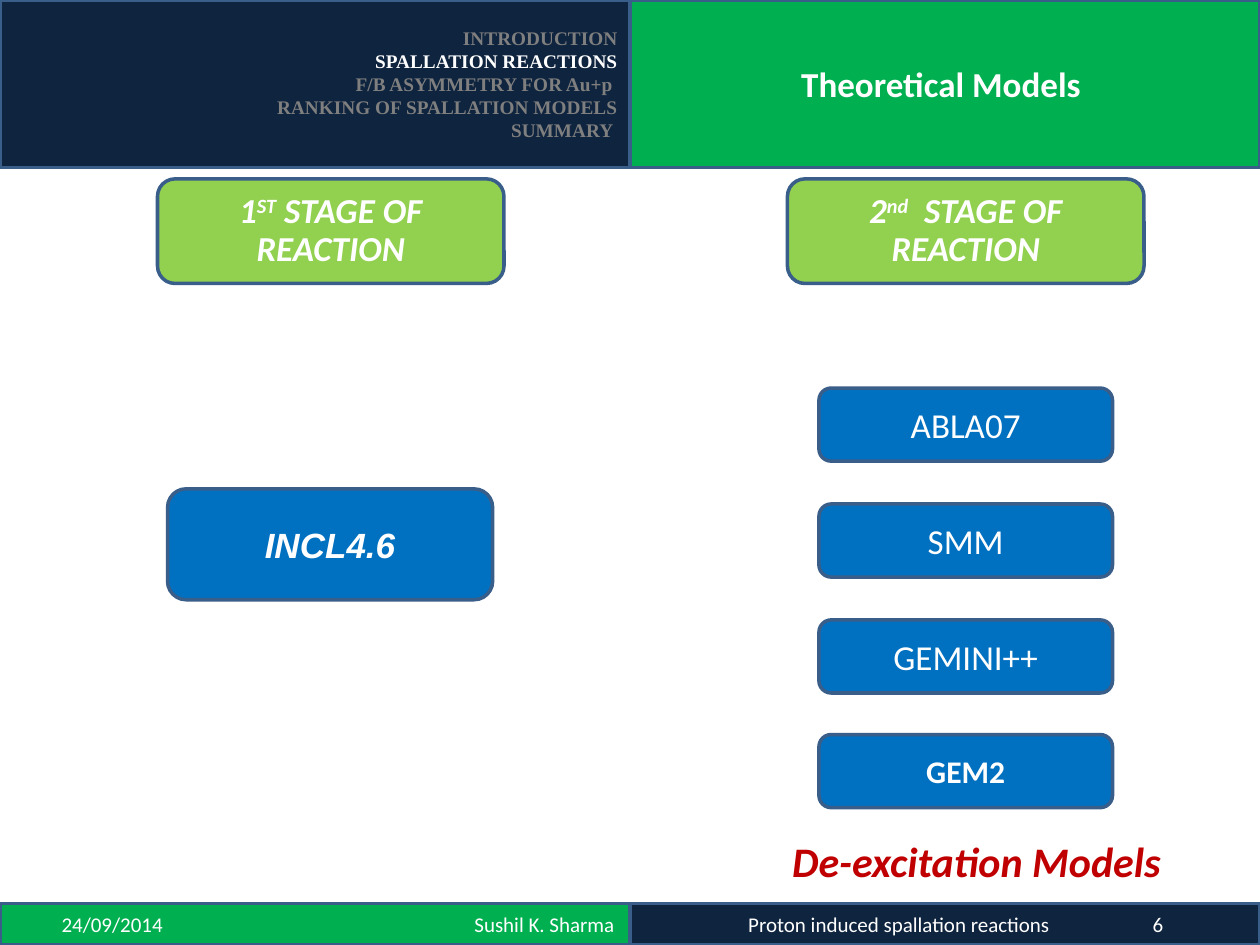
from lxml.etree import SubElement
from pptx import Presentation
from pptx.dml.color import RGBColor
from pptx.enum.shapes import MSO_SHAPE
from pptx.enum.text import MSO_ANCHOR, PP_ALIGN
from pptx.oxml.ns import qn
from pptx.util import Inches, Pt

NAVY, GREEN, LIME, BLUE = "0F243E", "00B050", "92D050", "0070C0"
OUTLINE, WHITE, GREY, RED = "395E8A", "FFFFFF", "7F7F7F", "C00000"
HALF_WIDTH = 5


def color(value):
    return RGBColor.from_string(value)


def add_span(para, text, size=20, font="Calibri", fill=WHITE, bold=False,
             italic=False, baseline=0):
    span = para.add_run()
    span.text = text
    span.font.size = Pt(size)
    span.font.name = font
    span.font.bold = bold
    span.font.italic = italic
    span.font.color.rgb = color(fill)
    if baseline:
        span._r.get_or_add_rPr().set("baseline", str(baseline * 1000))


def add_panel(page, left, top, width, height, fill, kind=MSO_SHAPE.RECTANGLE):
    box = page.shapes.add_shape(kind, Inches(left), Inches(top),
                                Inches(width), Inches(height))
    box.shadow.inherit = False
    box.fill.solid()
    box.fill.fore_color.rgb = color(fill)
    box.line.color.rgb = color(OUTLINE)
    box.line.width = Pt(2)
    frame = box.text_frame
    frame.word_wrap = True
    frame.vertical_anchor = MSO_ANCHOR.MIDDLE
    frame.paragraphs[0].alignment = PP_ALIGN.CENTER
    return frame


def add_model(page, left, top, width, height, name, **style):
    frame = add_panel(page, left, top, width, height, BLUE, MSO_SHAPE.ROUNDED_RECTANGLE)
    add_span(frame.paragraphs[0], name, **style)


def add_stage(page, left, width, number, suffix, rest):
    frame = add_panel(page, left, 1.42, width, 0.83, LIME, MSO_SHAPE.ROUNDED_RECTANGLE)
    para = frame.paragraphs[0]
    para.line_spacing = 0.9
    for text, baseline in ((number, 0), (suffix, 30), (rest, 0)):
        add_span(para, text, bold=True, italic=True, baseline=baseline)


def add_outline(page, sections, current):
    frame = add_panel(page, 0, 0, HALF_WIDTH, 1.33, NAVY)
    for index, section in enumerate(sections):
        para = frame.add_paragraph() if index else frame.paragraphs[0]
        para.alignment = PP_ALIGN.RIGHT
        add_span(para, section, size=11, font="Times New Roman", bold=True,
                 fill=WHITE if index == current else GREY)


def add_footer(page, left, fill, entries):
    frame = add_panel(page, left, 7.17, HALF_WIDTH, 0.33, fill)
    para = frame.paragraphs[0]
    para.alignment = PP_ALIGN.LEFT
    tabs = SubElement(para._p.get_or_add_pPr(), qn("a:tabLst"))
    for text, position, side in entries:
        SubElement(tabs, qn("a:tab"), pos=str(Inches(position)), algn=side)
        add_span(para, "\t" + text, size=12)


def add_caption(page, left, top, width, height, text, **style):
    box = page.shapes.add_textbox(Inches(left), Inches(top), Inches(width), Inches(height))
    box.text_frame.word_wrap = True
    para = box.text_frame.paragraphs[0]
    para.alignment = PP_ALIGN.CENTER
    add_span(para, text, **style)


def main():
    deck = Presentation()
    deck.slide_width, deck.slide_height = Inches(10), Inches(7.5)
    page = deck.slides.add_slide(deck.slide_layouts[6])

    for index, name in enumerate(("ABLA07", "SMM", "GEMINI++")):
        add_model(page, 6.5, 3.08 + index * 0.92, 2.33, 0.58, name)
    add_model(page, 6.5, 5.83, 2.33, 0.58, "GEM2", size=18, bold=True)
    add_model(page, 1.33, 3.88, 2.58, 0.88, "INCL4.6", font="Arial", bold=True, italic=True)

    add_stage(page, 6.25, 2.83, "2", "nd", "  STAGE OF REACTION")
    add_stage(page, 1.25, 2.75, "1", "ST", " STAGE OF REACTION")

    add_outline(page, ("INTRODUCTION", "SPALLATION REACTIONS", "F/B ASYMMETRY FOR Au+p ",
                       "RANKING OF SPALLATION MODELS", "SUMMARY "), current=1)
    title = add_panel(page, HALF_WIDTH, 0, HALF_WIDTH, 1.33, GREEN)
    add_span(title.paragraphs[0], "Theoretical Models ", bold=True)

    add_caption(page, 6, 6.58, 3.5, 0.74, "De-excitation Models",
                size=24, fill=RED, bold=True, italic=True)

    add_footer(page, 0, GREEN, (("24/09/2014", 0.39, "l"), ("Sushil K. Sharma", 4.78, "r")))
    add_footer(page, HALF_WIDTH, NAVY,
               (("Proton induced spallation reactions", 0.84, "l"), ("6", 4.05, "l")))
    deck.save("out.pptx")


if __name__ == "__main__":
    main()
